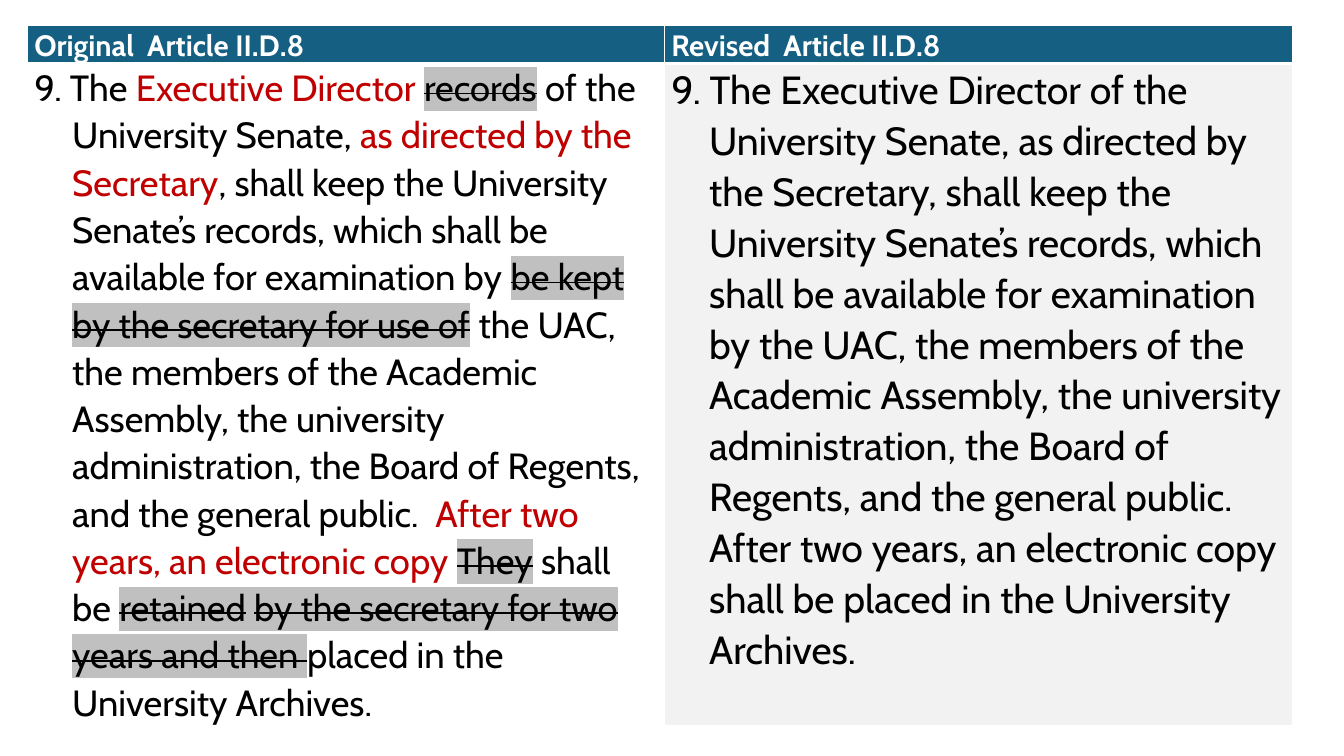
from dataclasses import dataclass

from lxml import etree
from pptx import Presentation
from pptx.dml.color import RGBColor
from pptx.oxml.ns import qn
from pptx.table import _Cell
from pptx.text.text import _Paragraph
from pptx.util import Pt

FONT = "Cabin"
WHITE = RGBColor(0xFF, 0xFF, 0xFF)
BLACK = RGBColor(0x00, 0x00, 0x00)
TEAL = RGBColor(0x15, 0x60, 0x82)
RED = RGBColor(0xC0, 0x00, 0x00)
SILVER = RGBColor(0xC0, 0xC0, 0xC0)
PALE_GRAY = RGBColor(0xF2, 0xF2, 0xF2)

TABLE_LEFT, TABLE_TOP = 19.6, 18
COLUMN_WIDTHS = (455, 448.5)
ROW_HEIGHTS = (26, 472)
HANGING_INDENT = 27
SIDE_MARGIN = 5
BORDER_TAGS = ("a:lnL", "a:lnR", "a:lnT", "a:lnB")


@dataclass(frozen=True)
class Wording:
    text: str
    color: RGBColor = BLACK
    struck: bool = False
    highlighted: bool = False


@dataclass(frozen=True)
class CellContent:
    wordings: list[Wording]
    size: float
    fill: RGBColor | None
    heading: bool = False


def added(text: str) -> Wording:
    return Wording(text, color=RED)


def deleted(text: str) -> Wording:
    return Wording(text, struck=True, highlighted=True)


def heading(text: str) -> CellContent:
    return CellContent([Wording(text, color=WHITE)], 21, TEAL, heading=True)


MARKED_ARTICLE = [
    Wording("9. The "),
    added("Executive Director "),
    deleted("records"),
    Wording(" of the University Senate, "),
    added("as directed by the Secretary"),
    Wording(", shall keep the University Senate’s records, which shall be "
            "available for examination by "),
    deleted("be kept by the secretary for use of"),
    Wording(" the UAC, the members of the Academic Assembly, the university "
            "administration, the Board of Regents, and the general public.  "),
    added("After two years, an electronic copy "),
    deleted("They"),
    Wording(" shall be "),
    deleted("retained"),
    Wording(" ", highlighted=True),
    deleted("by the secretary for two years and then "),
    Wording("placed in the University Archives."),
]
REVISED_ARTICLE = [
    Wording("9. The Executive Director of the University Senate, as directed by "
            "the Secretary, shall keep the University Senate’s records, which "
            "shall be available for examination by the UAC, the members of the "
            "Academic Assembly, the university administration, the Board of "
            "Regents, and the general public.  After two years, an electronic "
            "copy shall be placed in the University Archives."),
]
TABLE_ROWS = (
    (heading("Original  Article II.D.8"), heading("Revised  Article II.D.8")),
    (CellContent(MARKED_ARTICLE, 26, None),
     CellContent(REVISED_ARTICLE, 28, PALE_GRAY)),
)


def add_wording(paragraph: _Paragraph, wording: Wording, size: float, bold: bool) -> None:
    run = paragraph.add_run()
    run.text = wording.text
    run.font.name = FONT
    run.font.size = Pt(size)
    run.font.bold = bold
    run.font.color.rgb = wording.color
    properties = run.font._element
    if wording.struck:
        properties.set("strike", "sngStrike")
    if wording.highlighted:
        highlight = etree.Element(qn("a:highlight"))
        etree.SubElement(highlight, qn("a:srgbClr"), val=str(SILVER))
        properties.find(qn("a:solidFill")).addnext(highlight)


def set_borders(cell: _Cell, is_heading: bool) -> None:
    """Draw white borders, with a thicker rule between heading and body."""
    properties = cell._tc.get_or_add_tcPr()
    for position, tag in enumerate(BORDER_TAGS):
        width = Pt(3 if is_heading and tag == "a:lnB" else 1)
        border = etree.Element(qn(tag), w=str(width))
        solid_fill = etree.SubElement(border, qn("a:solidFill"))
        etree.SubElement(solid_fill, qn("a:srgbClr"), val=str(WHITE))
        properties.insert(position, border)


def fill_cell(cell: _Cell, content: CellContent) -> None:
    cell.margin_left = cell.margin_right = Pt(SIDE_MARGIN)
    cell.margin_top = cell.margin_bottom = Pt(0)
    if content.fill is None:
        cell.fill.background()
    else:
        cell.fill.solid()
        cell.fill.fore_color.rgb = content.fill
    set_borders(cell, content.heading)

    paragraph = cell.text_frame.paragraphs[0]
    paragraph.line_spacing = 1.07
    if not content.heading:
        properties = paragraph._p.get_or_add_pPr()
        properties.set("marL", str(Pt(HANGING_INDENT)))
        properties.set("indent", str(Pt(-HANGING_INDENT)))
    for wording in content.wordings:
        add_wording(paragraph, wording, content.size, content.heading)


def main() -> None:
    presentation = Presentation()
    presentation.slide_width, presentation.slide_height = Pt(960), Pt(540)
    slide = presentation.slides.add_slide(presentation.slide_layouts[6])
    table = slide.shapes.add_table(
        len(ROW_HEIGHTS), len(COLUMN_WIDTHS), Pt(TABLE_LEFT), Pt(TABLE_TOP),
        Pt(sum(COLUMN_WIDTHS)), Pt(sum(ROW_HEIGHTS))).table
    table.horz_banding = False
    for column, width in zip(table.columns, COLUMN_WIDTHS):
        column.width = Pt(width)
    for row, height, contents in zip(table.rows, ROW_HEIGHTS, TABLE_ROWS):
        row.height = Pt(height)
        for cell, content in zip(row.cells, contents):
            fill_cell(cell, content)
    presentation.save("out.pptx")


if __name__ == "__main__":
    main()
